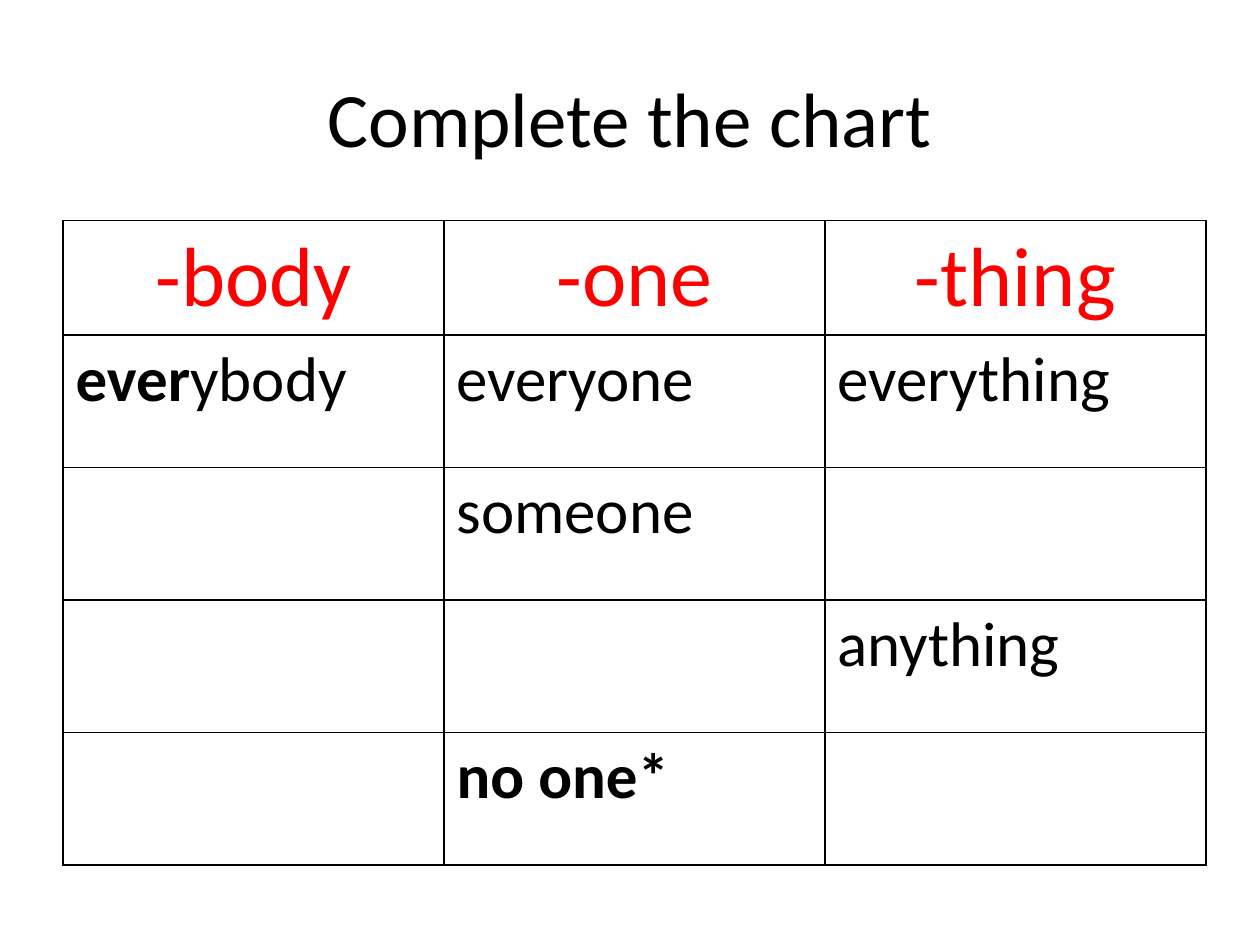
import pptx
import pptx.dml.color
import pptx.enum.text
import pptx.oxml
import pptx.oxml.ns
import pptx.util

Pt = pptx.util.Pt
CENTER = pptx.enum.text.PP_ALIGN.CENTER
LEFT = pptx.enum.text.PP_ALIGN.LEFT
MIDDLE = pptx.enum.text.MSO_ANCHOR.MIDDLE
COLORS = {"text": "000000", "heading": "FF0000", "paper": "FFFFFF", "border": "000000"}

HEADINGS = ["-body", "-one", "-thing"]
# Each cell is a list of (text, bold) pieces
WORDS = [
    [[("ever", True), ("ybody", False)], [("everyone", False)], [("everything", False)]],
    [[], [("someone", False)], []],
    [[], [], [("anything", False)]],
    [[], [("no one*", True)], []],
]


class SlideBuilder:
    font = "Calibri"

    def __init__(self, presentation):
        self.slide = presentation.slides.add_slide(presentation.slide_layouts[6])
        fill = self.slide.background.fill
        fill.solid()
        fill.fore_color.rgb = self.color("paper")

    def color(self, name):
        return pptx.dml.color.RGBColor.from_string(COLORS[name])

    def add_text(self, text_frame, pieces, size, color, alignment):
        paragraph = text_frame.paragraphs[0]
        paragraph.alignment = alignment
        for text, bold in pieces:
            run = paragraph.add_run()
            run.text = text
            run.font.name = self.font
            run.font.size = Pt(size)
            run.font.bold = bold
            run.font.color.rgb = self.color(color)

    def title(self, text, left, top, width, height):
        shape = self.slide.shapes.add_textbox(Pt(left), Pt(top), Pt(width), Pt(height))
        shape.text_frame.word_wrap = True
        shape.text_frame.vertical_anchor = MIDDLE
        self.add_text(shape.text_frame, [(text, False)], 44, "text", CENTER)

    def border(self, cell):
        properties = cell._tc.get_or_add_tcPr()
        for position, side in enumerate(("lnL", "lnR", "lnT", "lnB")):
            line = pptx.oxml.parse_xml(
                f'<a:{side} {pptx.oxml.ns.nsdecls("a")} w="{Pt(1)}"><a:solidFill>'
                f'<a:srgbClr val="{COLORS["border"]}"/></a:solidFill></a:{side}>')
            properties.insert(position, line)

    def table(self, headings, rows, left, top, column_width, heading_height, row_height):
        frame = self.slide.shapes.add_table(
            len(rows) + 1, len(headings), Pt(left), Pt(top),
            Pt(column_width * len(headings)),
            Pt(heading_height + row_height * len(rows)))
        table = frame.table
        table.horz_banding = False
        for column in table.columns:
            column.width = Pt(column_width)
        for index, row in enumerate(table.rows):
            row.height = Pt(row_height if index else heading_height)
        for cell in table.iter_cells():
            cell.fill.solid()
            cell.fill.fore_color.rgb = self.color("paper")
            self.border(cell)
        for column, heading in enumerate(headings):
            self.add_text(table.cell(0, column).text_frame, [(heading, False)],
                          48, "heading", CENTER)
        for row, words in enumerate(rows, start=1):
            for column, pieces in enumerate(words):
                self.add_text(table.cell(row, column).text_frame, pieces, 36, "text", LEFT)


def main():
    presentation = pptx.Presentation()
    presentation.slide_width = Pt(720)
    presentation.slide_height = Pt(540)
    builder = SlideBuilder(presentation)

    # Title
    builder.title("Complete the chart", 36, 21.6, 648, 90)

    # Pronoun table
    builder.table(HEADINGS, WORDS, left=36, top=126, column_width=217.7,
                  heading_height=65.5, row_height=75.7)

    presentation.save("out.pptx")


if __name__ == "__main__":
    main()
